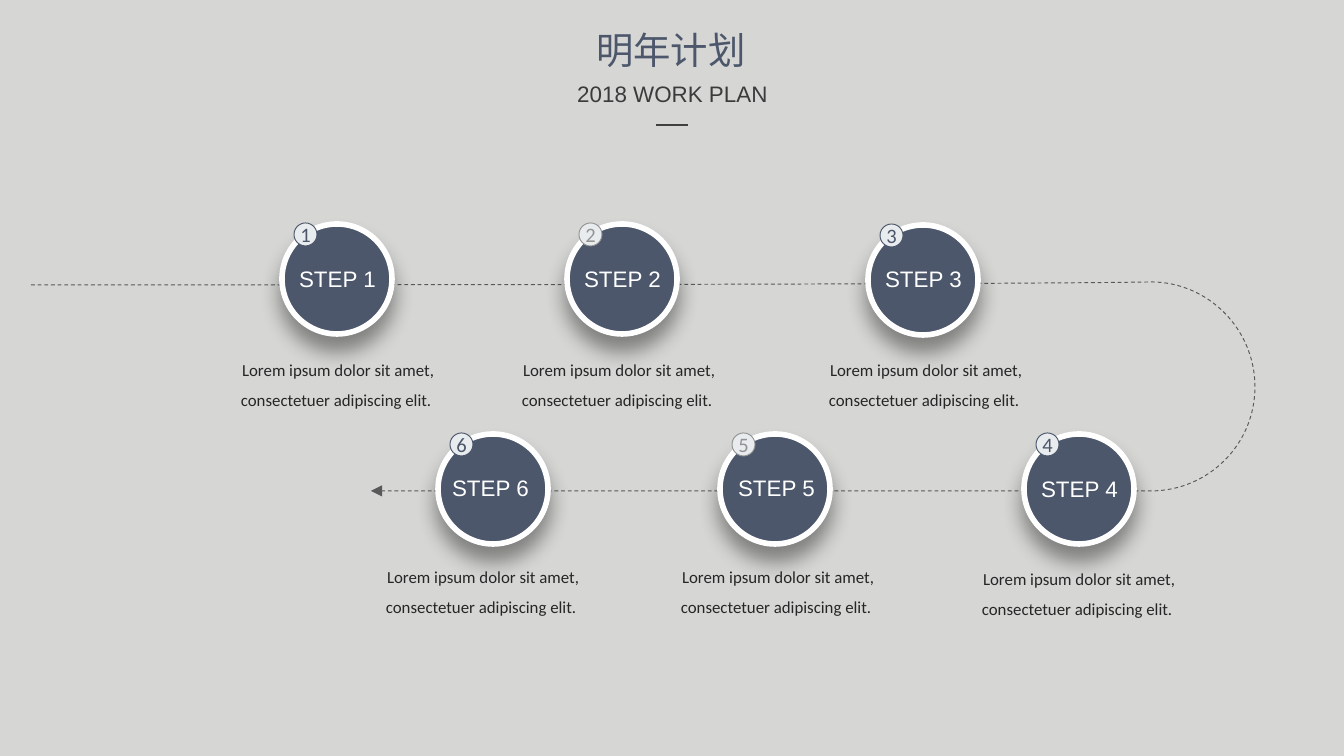
from lxml import etree
from pptx import Presentation, oxml, util as u
from pptx.dml.color import RGBColor
from pptx.enum import dml, shapes, text
from pptx.oxml import ns

PX = u.Inches(10) / 1344
NAVY, GREY, PALE, WHITE = "4C576B", "939393", "E8ECEE", "FFFFFF"


def tint(target, hue):
    target.rgb = RGBColor.from_string(hue)


def write(box, words, size, face, hue, **formats):
    frame = box.text_frame
    defaults = {"word_wrap": True, "vertical_anchor": text.MSO_ANCHOR.TOP,
                "auto_size": text.MSO_AUTO_SIZE.SHAPE_TO_FIT_TEXT}
    for name, value in {**defaults, **formats}.items():
        setattr(frame, name, value)
    para = frame.paragraphs[0]
    para.alignment = text.PP_ALIGN.CENTER
    span = para.add_run()
    for name, value in {"text": words}.items():
        setattr(span, name, value)
    for name, value in {"size": u.Pt(size), "name": face, "bold": False}.items():
        setattr(span.font, name, value)
    tint(span.font.color, hue)
    return para


deck = Presentation()
deck.slide_width, deck.slide_height = round(1344 * PX), round(756 * PX)
page = deck.slides.add_slide(deck.slide_layouts[5])
page.background.fill.solid()
tint(page.background.fill.fore_color, "D6D6D4")

title = page.shapes.title
for name, value in {"left": 513, "top": 20, "width": 316, "height": 59}.items():
    setattr(title, name, round(value * PX))
write(title, "明年计划", 20, "Arial", NAVY)
subtitle = page.shapes.add_textbox(*[round(v * PX) for v in (438, 74, 469, 40)])
write(subtitle, "2018 WORK PLAN", 12, "Arial", "3B3B3B")

rule = page.shapes.add_connector(
    shapes.MSO_CONNECTOR.STRAIGHT, *[round(v * PX) for v in (656, 125, 688, 125)])
rule.line.width = u.Pt(1.5)
tint(rule.line.color, "404040")
etree.SubElement(rule._element.spPr, ns.qn("a:effectLst"))

bezier_points = [
    (1042, 285), (1151, 282), (1151, 282),
    (1208, 282), (1255, 329), (1255, 387),
    (1255, 445), (1208, 491), (1151, 491),
    (800, 491), (500, 491), (371, 491),
]
builder = page.shapes.build_freeform(31, 285, scale=PX)
builder.add_line_segments(bezier_points, close=False)
road = builder.convert_to_shape()
road.shadow.inherit = False
road.fill.background()
road.line.width = u.Pt(0.5)
tint(road.line.color, "595959")
road.line.dash_style = dml.MSO_LINE.DASH
etree.SubElement(road.line._get_or_add_ln(), ns.qn("a:tailEnd"), type="triangle")
segments = list(road._element.iter(ns.qn("a:lnTo")))
for start in range(0, len(segments), 3):
    curve = etree.Element(ns.qn("a:cubicBezTo"))
    segments[start].addprevious(curve)
    for segment in segments[start:start + 3]:
        curve.append(segment[0])
        segment.getparent().remove(segment)

SHADOW = (
    f'<a:outerShdw {ns.nsdecls("a")} blurRad="{u.Pt(11)}" dist="{u.Pt(8)}" '
    'dir="5400000" algn="t" rotWithShape="0"><a:srgbClr val="000000">'
    '<a:alpha val="40000"/></a:srgbClr></a:outerShdw>')

steps = [
    (1, 282, 224, 285, 259, 192, 343, NAVY),
    (2, 567, 224, 570, 259, 473, 343, GREY),
    (3, 868, 225, 871, 259, 780, 343, NAVY),
    (4, 1024, 434, 1027, 469, 933, 552, NAVY),
    (5, 720, 434, 724, 468, 632, 550, GREY),
    (6, 438, 434, 438, 468, 337, 550, NAVY),
]
for number, left, top, label_left, label_top, note_left, note_top, accent in steps:
    discs = []
    for x, y, size, fill, edge, weight in (
            (left, top, 110, NAVY, WHITE, 3),
            (left + 12, top - 1, 23, PALE, accent, 0.5)):
        disc = page.shapes.add_shape(
            shapes.MSO_SHAPE.OVAL, *[round(v * PX) for v in (x, y, size, size)])
        disc.shadow.inherit = False
        disc.fill.solid()
        tint(disc.fill.fore_color, fill)
        tint(disc.line.color, edge)
        disc.line.width = u.Pt(weight)
        discs.append(disc)
    circle, badge = discs
    circle._element.spPr.find(ns.qn("a:effectLst")).append(oxml.parse_xml(SHADOW))
    write(badge, str(number), 11, "Calibri", accent,
          auto_size=text.MSO_AUTO_SIZE.NONE, vertical_anchor=text.MSO_ANCHOR.MIDDLE,
          margin_left=0, margin_top=0, margin_right=0, margin_bottom=0)

    label = page.shapes.add_textbox(
        *[round(v * PX) for v in (label_left, label_top, 105, 40)])
    write(label, f"STEP {number}", 12, "Arial", WHITE, word_wrap=False)
    note = page.shapes.add_textbox(
        *[round(v * PX) for v in (note_left, note_top, 292, 75)])
    para = write(note, "Lorem ipsum dolor sit amet, consectetuer adipiscing elit. ",
                 9, "Calibri", "262626")
    para.line_spacing = 1.5

deck.save("out.pptx")
